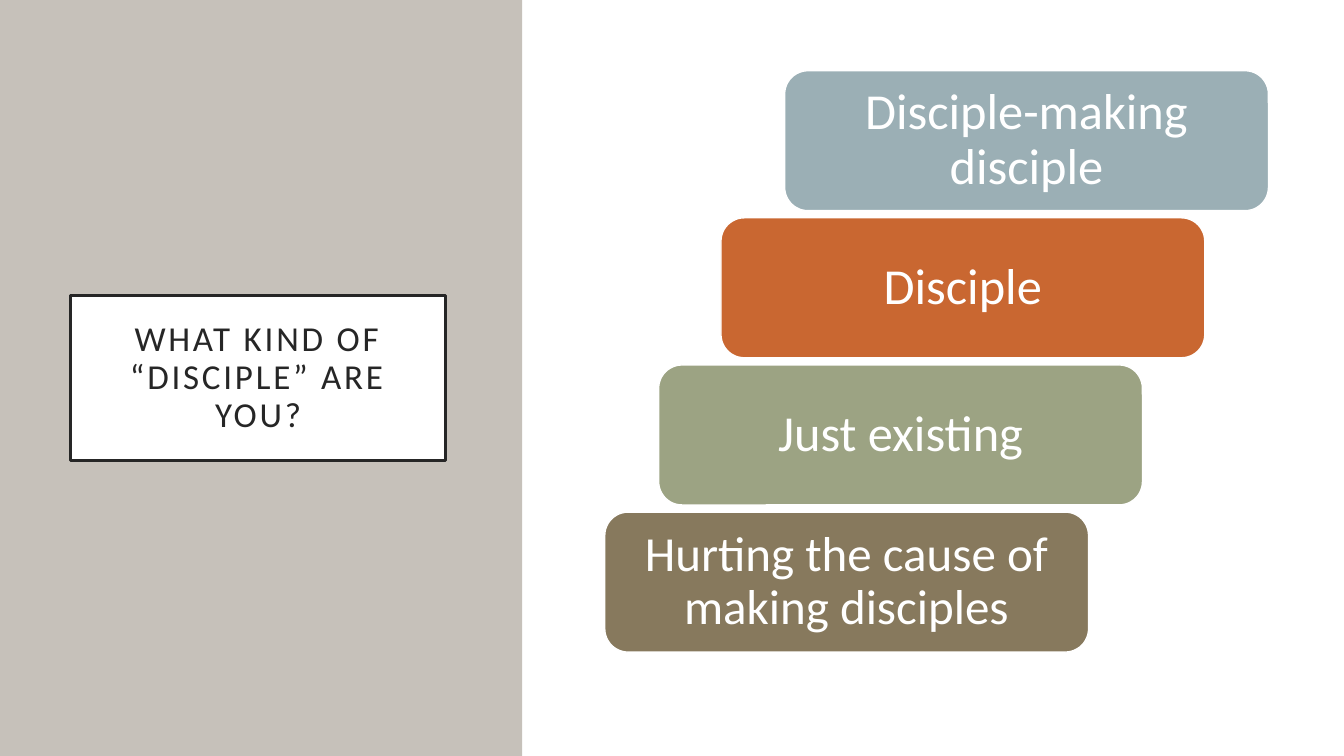
from pptx import Presentation
from pptx.dml.color import RGBColor
from pptx.enum.shapes import MSO_SHAPE
from pptx.enum.text import MSO_ANCHOR, PP_ALIGN
from pptx.util import Pt

WHITE = RGBColor(0xFF, 0xFF, 0xFF)
INK = RGBColor(0x26, 0x26, 0x26)
STONE = RGBColor(0xC6, 0xC1, 0xBA)
BLUE_GREY = RGBColor(0x9B, 0xAF, 0xB5)
ORANGE = RGBColor(0xC9, 0x67, 0x31)
SAGE = RGBColor(0x9C, 0xA3, 0x83)
BROWN = RGBColor(0x87, 0x79, 0x5D)

presentation = Presentation()
presentation.slide_width = Pt(960)
presentation.slide_height = Pt(540)
slide = presentation.slides.add_slide(presentation.slide_layouts[6])


def add_block(kind, left, top, width, height, fill, line=None, line_width=1):
    block = slide.shapes.add_shape(kind, Pt(left), Pt(top), Pt(width), Pt(height))
    block.shadow.inherit = False
    block.fill.solid()
    block.fill.fore_color.rgb = fill
    if line is None:
        block.line.fill.background()
    else:
        block.line.color.rgb = line
        block.line.width = Pt(line_width)
    return block


def write_text(block, text, size, color, inset_x, inset_y):
    frame = block.text_frame
    frame.word_wrap = True
    frame.vertical_anchor = MSO_ANCHOR.MIDDLE
    frame.margin_left = frame.margin_right = Pt(inset_x)
    frame.margin_top = frame.margin_bottom = Pt(inset_y)
    frame.text = text
    paragraph = frame.paragraphs[0]
    paragraph.alignment = PP_ALIGN.CENTER
    paragraph.line_spacing = 0.9
    run = paragraph.runs[0]
    run.font.name = "Calibri"
    run.font.size = Pt(size)
    run.font.color.rgb = color
    return run


# Left panel with the framed question
add_block(MSO_SHAPE.RECTANGLE, 0, 0, 373, 540, STONE)
question = add_block(MSO_SHAPE.RECTANGLE, 50.4, 211, 268, 118, WHITE, INK, 2.5)
question_run = write_text(question, "WHAT KIND OF “DISCIPLE” ARE YOU?", 25, INK, 14.4, 14.4)
question_run.font._element.set("spc", "200")

# Right panel
add_block(MSO_SHAPE.RECTANGLE, 374, 0, 586, 540, WHITE)

# Staircase of disciple kinds, from the top step down
steps = [
    ("Disciple-making disciple", 560.5, BLUE_GREY, 36),
    ("Disciple", 515, ORANGE, 36),
    ("Just existing", 470.5, SAGE, 36),
    ("Hurting the cause of making disciples", 432, BROWN, 35),
]
STEP_TOP, STEP_PITCH = 50.5, 105.1
for index, (kind_of_disciple, left, color, size) in enumerate(steps):
    step = add_block(MSO_SHAPE.ROUNDED_RECTANGLE, left, STEP_TOP + index * STEP_PITCH,
                     345.6, 100, color, WHITE)
    write_text(step, kind_of_disciple, size, WHITE, 10.8, 5)

presentation.save("out.pptx")
